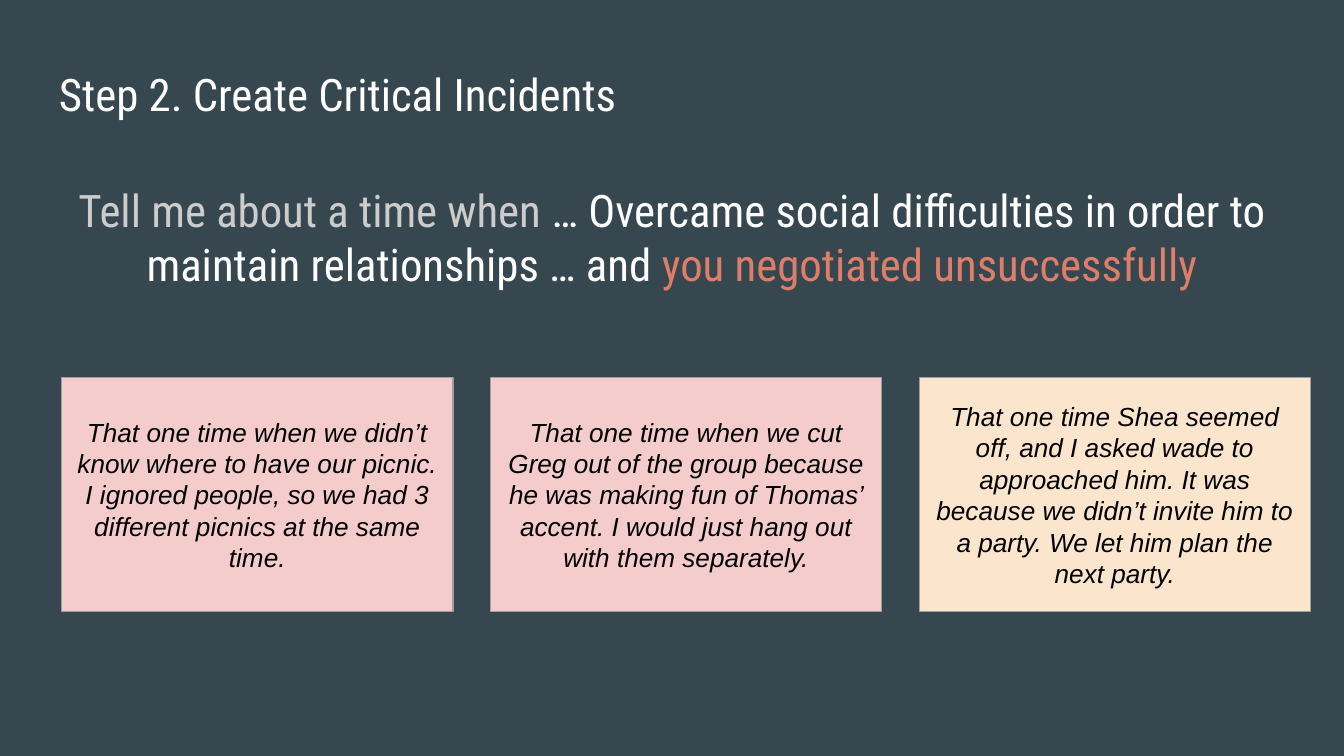
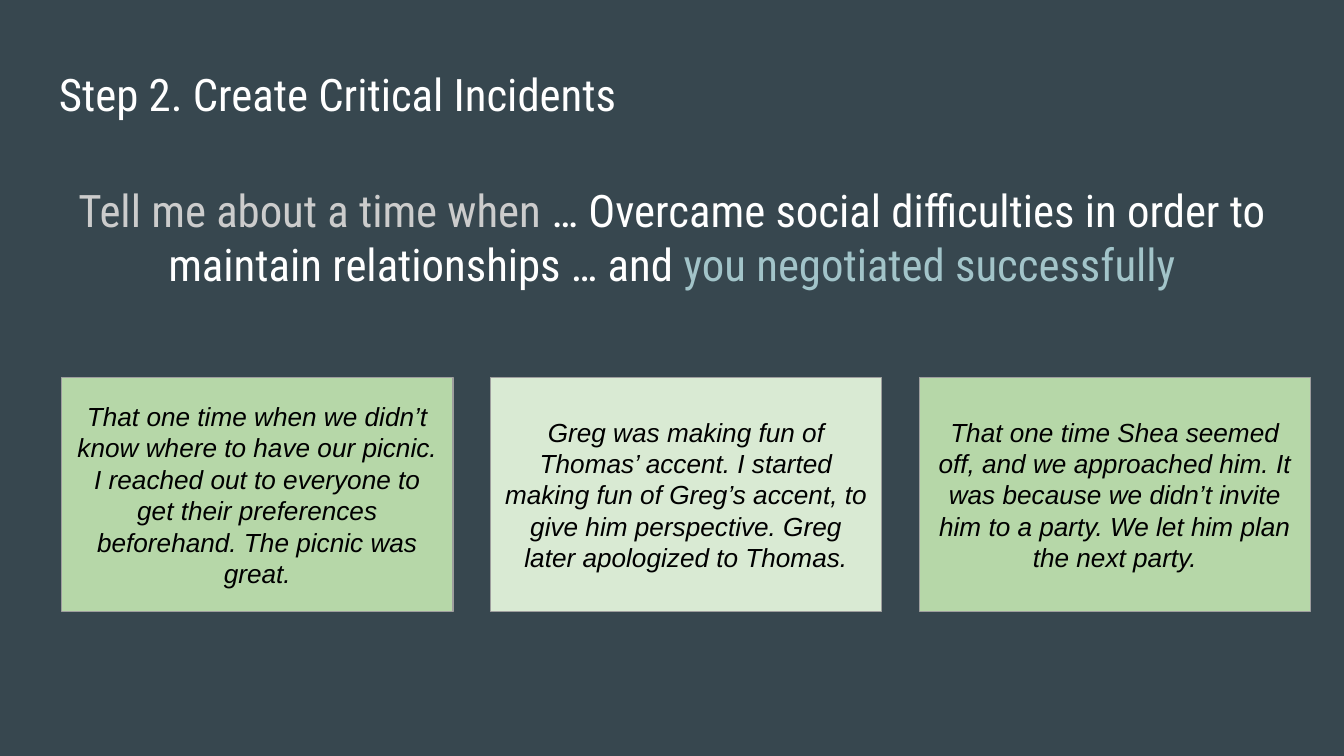
from dataclasses import dataclass

from pptx import Presentation
from pptx.dml.color import RGBColor
from pptx.enum.shapes import MSO_SHAPE
from pptx.enum.text import MSO_ANCHOR, PP_ALIGN
from pptx.slide import Slide
from pptx.text.text import TextFrame
from pptx.util import Inches, Pt

RECTANGLE = MSO_SHAPE.RECTANGLE
LEFT, CENTER = PP_ALIGN.LEFT, PP_ALIGN.CENTER
TOP, MIDDLE = MSO_ANCHOR.TOP, MSO_ANCHOR.MIDDLE


@dataclass(frozen=True)
class Theme:
    background: str = "37474F"
    white: str = "FFFFFF"
    muted: str = "CCCCCC"
    failure: str = "DD7E6B"
    success: str = "A2C4C9"
    border: str = "9E9E9E"
    ink: str = "000000"
    pink: str = "F4CCCC"
    peach: str = "FCE5CD"
    green: str = "B6D7A8"
    pale_green: str = "D9EAD3"
    heading_font: str = "Roboto Condensed"
    card_font: str = "Arial"
    heading_size: int = 24
    card_size: int = 14


THEME = Theme()
SLIDE_WIDTH = Inches(10)
SLIDE_HEIGHT = SLIDE_WIDTH * 9 // 16
TEXT_LEFT, TEXT_WIDTH = 0.34, 9.32
CARD_LEFT, CARD_TOP = 0.46, 2.81
CARD_WIDTH, CARD_HEIGHT, CARD_PITCH = 2.91, 1.74, 3.19


@dataclass(frozen=True)
class Incident:
    story: str
    fill: str


@dataclass(frozen=True)
class IncidentSlide:
    outcome: str
    outcome_color: str
    incidents: tuple[Incident, ...]


@dataclass(frozen=True)
class Span:
    text: str
    color: str


SLIDES = (
    IncidentSlide("you negotiated unsuccessfully", THEME.failure, (
        Incident("That one time when we didn’t know where to have our picnic. "
                 "I ignored people, so we had 3 different picnics at the same time.",
                 THEME.pink),
        Incident("That one time when we cut Greg out of the group because he was "
                 "making fun of Thomas’ accent. I would just hang out with them "
                 "separately.", THEME.pink),
        Incident("That one time Shea seemed off, and I asked wade to approached him. "
                 "It was because we didn’t invite him to a party. We let him plan "
                 "the next party.", THEME.peach),
    )),
    IncidentSlide("you negotiated successfully", THEME.success, (
        Incident("That one time when we didn’t know where to have our picnic. "
                 "I reached out to everyone to get their preferences beforehand. "
                 "The picnic was great.", THEME.green),
        Incident("Greg was making fun of Thomas’ accent. I started making fun of "
                 "Greg’s accent, to give him perspective. Greg later apologized "
                 "to Thomas.", THEME.pale_green),
        Incident("That one time Shea seemed off, and we approached him. It was "
                 "because we didn’t invite him to a party. We let him plan the "
                 "next party.", THEME.green),
    )),
)


def rgb(color: str) -> RGBColor:
    return RGBColor.from_string(color)


def write(frame: TextFrame, spans: tuple[Span, ...], font: str, size: int,
          align: PP_ALIGN, anchor: MSO_ANCHOR, italic: bool = False) -> None:
    """Fill a frame with one paragraph of coloured spans."""
    frame.word_wrap = True
    frame.vertical_anchor = anchor
    frame.margin_left = frame.margin_right = Inches(0.1)
    frame.margin_top = frame.margin_bottom = Inches(0.1)
    paragraph = frame.paragraphs[0]
    paragraph.alignment = align
    paragraph.font.name = font
    paragraph.font.size = Pt(size)
    paragraph.font.italic = italic
    for span in spans:
        run = paragraph.add_run()
        run.text = span.text
        run.font.color.rgb = rgb(span.color)


def add_heading(slide: Slide, top: float, height: float,
                spans: tuple[Span, ...], align: PP_ALIGN) -> None:
    heading = slide.shapes.add_textbox(
        Inches(TEXT_LEFT), Inches(top), Inches(TEXT_WIDTH), Inches(height))
    write(heading.text_frame, spans, THEME.heading_font, THEME.heading_size,
          align, TOP)


def add_card(slide: Slide, column: int, incident: Incident) -> None:
    card = slide.shapes.add_shape(
        RECTANGLE, Inches(CARD_LEFT + column * CARD_PITCH), Inches(CARD_TOP),
        Inches(CARD_WIDTH), Inches(CARD_HEIGHT))
    card.shadow.inherit = False
    card.fill.solid()
    card.fill.fore_color.rgb = rgb(incident.fill)
    card.line.color.rgb = rgb(THEME.border)
    card.line.width = Pt(0.75)
    write(card.text_frame, (Span(incident.story, THEME.ink),), THEME.card_font,
          THEME.card_size, CENTER, MIDDLE, italic=True)


def add_incident_slide(deck: Presentation, content: IncidentSlide) -> None:
    slide = deck.slides.add_slide(deck.slide_layouts[6])
    slide.background.fill.solid()
    slide.background.fill.fore_color.rgb = rgb(THEME.background)
    add_heading(slide, 0.4, 0.67,
                (Span("Step 2. Create Critical Incidents", THEME.white),), LEFT)
    add_heading(slide, 1.26, 1.09, (
        Span("Tell me about a time when", THEME.muted),
        Span(" … Overcame social difficulties in order to maintain "
             "relationships … and ", THEME.white),
        Span(content.outcome, content.outcome_color),
    ), CENTER)
    for column, incident in enumerate(content.incidents):
        add_card(slide, column, incident)


def main() -> None:
    deck = Presentation()
    deck.slide_width, deck.slide_height = SLIDE_WIDTH, SLIDE_HEIGHT
    for content in SLIDES:
        add_incident_slide(deck, content)
    deck.save("out.pptx")


if __name__ == "__main__":
    main()
